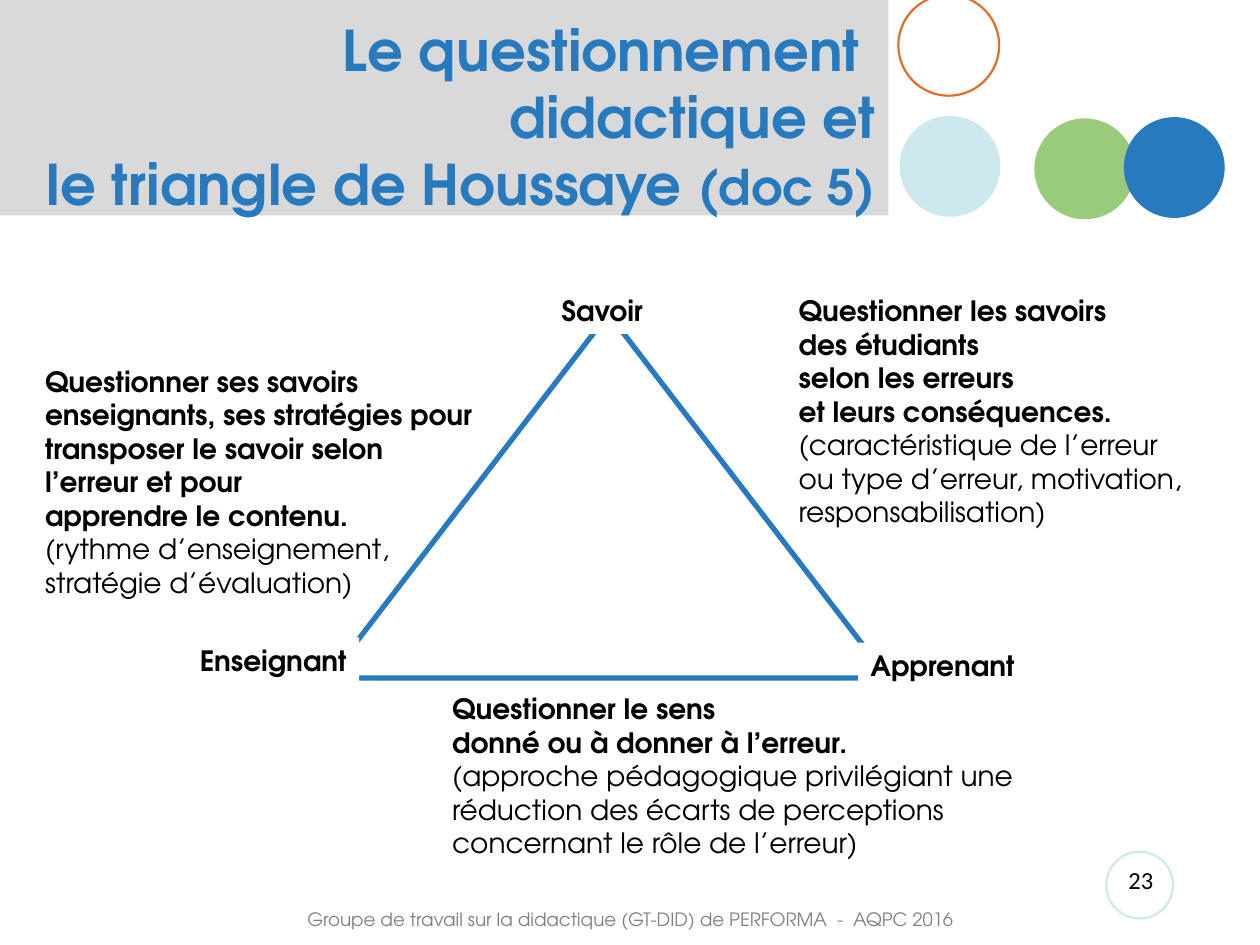
from pptx import Presentation
from pptx import util as u
from pptx.dml.color import RGBColor
from pptx.enum import shapes, text

# The slide is a grid of 100 columns by 75 rows
WIDTH, HEIGHT = u.Inches(10), u.Inches(7.5)
COL, ROW = WIDTH / 100, HEIGHT / 75
FONT = "TeX Gyre Adventor"
BLUE, PALE, WHITE, BLACK = "287ABF", "CCE9EF", "FFFFFF", "000000"
LEFT, RIGHT, CENTER = (text.PP_ALIGN.LEFT, text.PP_ALIGN.RIGHT,
                       text.PP_ALIGN.CENTER)
FIT = text.MSO_AUTO_SIZE.SHAPE_TO_FIT_TEXT
SHAPE = shapes.MSO_SHAPE


def color(code):
    return RGBColor.from_string(code)


def place(col, row, cols, rows):
    return [u.Emu(round(v)) for v in (col * COL, row * ROW, cols * COL, rows * ROW)]


def set_all(obj, **values):
    for name, value in values.items():
        setattr(obj, name, value)


def add_run(p, words, size=16, bold=False, font=FONT, ink=BLACK):
    r = p.add_run()
    r.text = words
    set_all(r.font, name=font, size=u.Pt(size), bold=bold)
    r.font.color.rgb = color(ink)


def add_figure(s, kind, box, fill=None, line=None, width=1.25):
    sp = s.shapes.add_shape(kind, *place(*box))
    sp.shadow.inherit = False
    if fill:
        sp.fill.solid()
        sp.fill.fore_color.rgb = color(fill)
    else:
        sp.fill.background()
    if line:
        sp.line.color.rgb = color(line)
        sp.line.width = u.Pt(width)
    else:
        sp.line.fill.background()
    return sp


def add_text(s, box, words, align=LEFT, **style):
    sp = s.shapes.add_textbox(*place(*box))
    sp.text_frame.word_wrap = True
    p = sp.text_frame.paragraphs[0]
    p.alignment = align
    add_run(p, words, **style)


def add_note(s, box, question, detail):
    """Bold question lines followed by plain detail lines."""
    tf = s.shapes.add_textbox(*place(*box)).text_frame
    set_all(tf, word_wrap=False, auto_size=FIT)
    lines = [(w, True) for w in question] + [(w, False) for w in detail]
    for i, (words, bold) in enumerate(lines):
        p = tf.add_paragraph() if i else tf.paragraphs[0]
        add_run(p, words, bold=bold)


def add_corner(s, box, words, align=LEFT):
    """White label that covers a corner of the triangle."""
    tf = add_figure(s, SHAPE.RECTANGLE, box, WHITE).text_frame
    set_all(tf, word_wrap=False, auto_size=FIT,
            vertical_anchor=text.MSO_ANCHOR.TOP)
    p = tf.paragraphs[0]
    p.alignment = align
    add_run(p, words, bold=True)


def add_title(s, box, lines, suffix):
    title = s.shapes.title
    left, top, width, height = place(*box)
    set_all(title, left=left, top=top, width=width, height=height)
    tf = title.text_frame
    set_all(tf, word_wrap=True, auto_size=text.MSO_AUTO_SIZE.NONE,
            vertical_anchor=text.MSO_ANCHOR.MIDDLE)
    p = tf.paragraphs[0]
    p.alignment = RIGHT
    for i, words in enumerate(lines):
        if i:
            p.add_line_break()
        add_run(p, words, size=32, bold=True, ink=BLUE)
    add_run(p, suffix, size=28, bold=True, ink=BLUE)


def main():
    prs = Presentation()
    set_all(prs, slide_width=WIDTH, slide_height=HEIGHT)
    s = prs.slides.add_slide(prs.slide_layouts[5])

    # Title on its grey band
    band = add_figure(s, SHAPE.RECTANGLE, (0, 0, 70.5, 17.1), "D9D9D9")
    s.shapes._spTree.remove(band._element)
    s.shapes._spTree.insert(2, band._element)
    add_title(s, (2.6, 1.3, 67.9, 15.8),
              ["Le questionnement ", "didactique et", "le triangle de Houssaye "],
              "(doc 5)")

    # Decorative circles
    for col, row, fill, line in [(82.1, 9.4, "9ACB7A", None),
                                 (71.3, -0.4, None, "E36D26"),
                                 (71.4, 9.2, PALE, None),
                                 (89.2, 9.3, BLUE, None)]:
        add_figure(s, SHAPE.OVAL, (col, row, 8, 8), fill, line)

    # Page number and footer
    add_figure(s, SHAPE.OVAL, (87.8, 67.6, 5.3, 5.3), line=PALE)
    add_text(s, (87.8, 68.2, 5.5, 4), "23", CENTER, size=14, font="Calibri")
    add_text(s, (23.4, 71.6, 58.8, 2.9),
             "Groupe de travail sur la didactique (GT-DID) de PERFORMA  -  AQPC 2016",
             size=10.5, ink="808080")

    # Triangle
    triangle = add_figure(s, SHAPE.ISOSCELES_TRIANGLE, (26.1, 24.9, 44.4, 28.9),
                          WHITE, BLUE, 3)
    triangle.adjustments[0] = 0.5

    # One note for each side
    add_note(s, (62.4, 22.8, 33.8, 19.9),
             ["Questionner les savoirs", "des étudiants",
              "selon les erreurs", "et leurs conséquences."],
             ["(caractéristique de l’erreur", "ou type d’erreur, motivation,",
              "responsabilisation)"])
    add_note(s, (2.6, 28.4, 36.4, 19.9),
             ["Questionner ses savoirs", "enseignants, ses stratégies pour",
              "transposer le savoir selon", "l’erreur et pour",
              "apprendre le contenu."],
             ["(rythme d’enseignement,", "stratégie d’évaluation)"])
    add_note(s, (34.9, 54.4, 47.1, 14.5),
             ["Questionner le sens", "donné ou à donner à l’erreur."],
             ["(approche pédagogique privilégiant une",
              "réduction des écarts de perceptions",
              "concernant le rôle de l’erreur)"])

    # Corner labels
    add_corner(s, (43.6, 22.8, 8.6, 3.7), "Savoir")
    add_corner(s, (68.1, 51, 13.9, 3.7), "Apprenant")
    add_corner(s, (14.6, 50.6, 13.9, 3.7), "Enseignant", RIGHT)

    prs.save("out.pptx")


if __name__ == "__main__":
    main()
